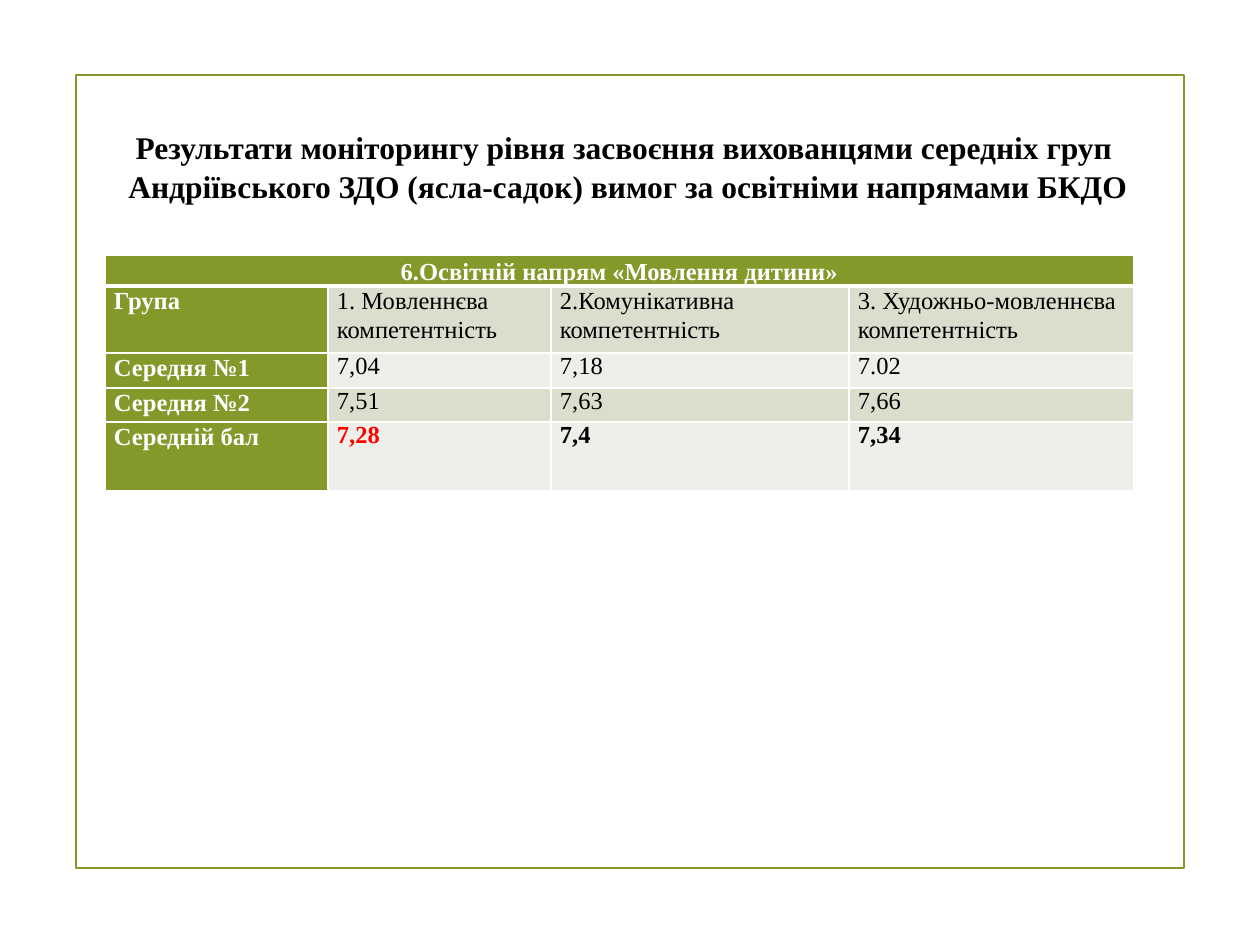
from dataclasses import dataclass
from pptx import Presentation
from pptx.dml.color import RGBColor
from pptx.enum.shapes import MSO_SHAPE
from pptx.enum.text import MSO_ANCHOR, MSO_AUTO_SIZE, PP_ALIGN
from pptx.oxml.ns import qn
from pptx.util import Pt
from lxml.etree import SubElement

SCALE = 914400 // 126


def px(*vals):
    return [val * SCALE for val in vals]


@dataclass
class Theme:
    font: str = "Times New Roman"
    green: str = "83992A"
    dark: str = "D9DECD"
    light: str = "EDEFE8"
    white: str = "FFFFFF"
    black: str = "000000"
    red: str = "FF0000"
    head: int = 18
    body: int = 14
    frame: float = 1.25
    thin: int = 1
    thick: int = 3


class Deck:
    def __init__(self, theme):
        self.theme = theme
        self.prs = Presentation()
        self.prs.slide_width, self.prs.slide_height = px(1260, 945)
        self.slide = self.prs.slides.add_slide(self.prs.slide_layouts[5])

    def run(self, para, text, size, color, bold):
        run = para.add_run()
        run.text = text
        font = run.font
        font.name = self.theme.font
        font.size = Pt(size)
        font.bold = bold
        font.color.rgb = RGBColor.from_string(color)

    def frame(self, *box):
        rect = self.slide.shapes.add_shape(MSO_SHAPE.RECTANGLE, *px(*box))
        rect.shadow.inherit = False
        rect.fill.background()
        rect.line.color.rgb = RGBColor.from_string(self.theme.green)
        rect.line.width = Pt(self.theme.frame)

    def title(self, lines, *box):
        shape = self.slide.shapes.title
        shape.left, shape.top, shape.width, shape.height = px(*box)
        text = shape.text_frame
        text.word_wrap = True
        text.auto_size = MSO_AUTO_SIZE.NONE
        text.vertical_anchor = MSO_ANCHOR.MIDDLE
        para = text.paragraphs[0]
        para.alignment = PP_ALIGN.CENTER
        para.line_spacing = 1.05
        for num, line in enumerate(lines):
            if num:
                para.add_line_break()
            self.run(para, line, self.theme.head, self.theme.black, True)

    def edge(self, cell, side, width):
        props = cell._tc.get_or_add_tcPr()
        line = SubElement(props, qn(f"a:ln{side}"), w=str(Pt(width)))
        fill = SubElement(line, qn("a:solidFill"))
        SubElement(fill, qn("a:srgbClr"), val=self.theme.white)

    def cell(self, cell, row, col, last):
        theme = self.theme
        for side in "LRTB":
            wide = (row, side) in ((0, "B"), (1, "T"))
            self.edge(cell, side, theme.thick if wide else theme.thin)
        label = row == 0 or col == 0
        band = theme.dark if row % 2 else theme.light
        cell.fill.solid()
        cell.fill.fore_color.rgb = RGBColor.from_string(
            theme.green if label else band)
        cell.margin_left, cell.margin_right = px(9, 9)
        cell.margin_top = cell.margin_bottom = 0
        cell.vertical_anchor = MSO_ANCHOR.TOP if row else MSO_ANCHOR.MIDDLE
        para = cell.text_frame.paragraphs[0]
        if row == 0:
            para.alignment = PP_ALIGN.CENTER
        if label or row == 1:
            para.line_spacing = 1.07 if row else 1.15
            para.space_after = Pt(8)
        return para, label or row == last

    def table(self, data, cols, rows, left, top):
        theme = self.theme
        box = px(left, top, sum(cols), sum(rows))
        table = self.slide.shapes.add_table(len(rows), len(cols), *box).table
        table.first_row = table.horz_banding = False
        for part, size in zip(table.columns, px(*cols)):
            part.width = size
        for part, size in zip(table.rows, px(*rows)):
            part.height = size
        last = len(rows) - 1
        for row in range(len(rows)):
            for col in range(len(cols)):
                para, bold = self.cell(table.cell(row, col), row, col, last)
                if col >= len(data[row]):
                    continue
                color = theme.white if row == 0 or col == 0 else theme.black
                if (row, col) == (last, 1):
                    color = theme.red
                self.run(para, data[row][col], theme.body, color, bold)
        table.cell(0, 0).merge(table.cell(0, len(cols) - 1))


def main():
    deck = Deck(Theme())
    deck.frame(76, 75, 1108, 793)
    deck.title([
        "Результати моніторингу рівня засвоєння вихованцями середніх груп ",
        "Андріївського ЗДО (ясла-садок) вимог за освітніми напрямами БКДО",
    ], 64, 76, 1128, 179)
    deck.table([
        ["6.Освітній напрям «Мовлення дитини»"],
        ["Група", "1. Мовленнєва компетентність",
         "2.Комунікативна компетентність",
         "3. Художньо-мовленнєва компетентність"],
        ["Середня №1", "7,04", "7,18", "7.02"],
        ["Середня №2", "7,51", "7,63", "7,66"],
        ["Середній бал", "7,28", "7,4", "7,34"],
    ], [223, 223, 298, 285], [30, 67, 35, 34, 69], 105, 255)
    deck.prs.save("out.pptx")


if __name__ == "__main__":
    main()
